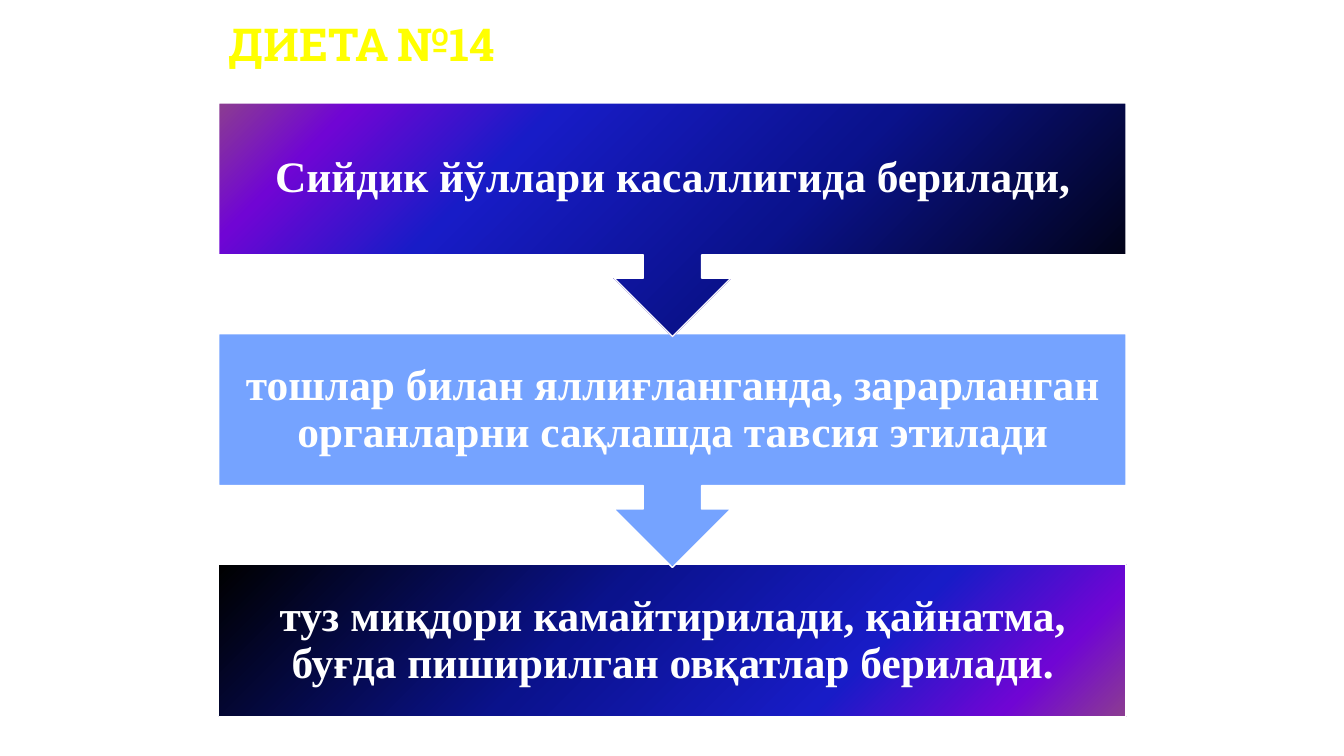
"""Build the slide on diet no. 14: three steps flowing downwards."""
from lxml import etree
from pptx import Presentation
from pptx.dml.color import RGBColor
from pptx.enum.shapes import MSO_SHAPE
from pptx.enum.text import MSO_ANCHOR, MSO_AUTO_SIZE, PP_ALIGN
from pptx.oxml.ns import qn
from pptx.util import Inches, Pt

BOX, CALL = MSO_SHAPE.RECTANGLE, MSO_SHAPE.DOWN_ARROW_CALLOUT
MIDDLE, NO_FIT = MSO_ANCHOR.MIDDLE, MSO_AUTO_SIZE.NONE
LEFT, CENTER = PP_ALIGN.LEFT, PP_ALIGN.CENTER

COLORS = {"title": "FFFF00", "text": "FFFFFF", "line": "FFFFFF", "sky": "6699FF"}
NIGHT = [(0, "000000"), (40, "0A128C"), (70, "181CC7"), (88, "7005D4"), (100, "8C3D91")]
DAWN = [(100 - pos, color) for pos, color in reversed(NIGHT)]

TITLE = "ДИЕТА №14\v"
STEPS = [
    (CALL, DAWN, "Сийдик йўллари касаллигида берилади,"),
    (CALL, None, "тошлар билан яллиғланганда, зарарланган органларни сақлашда тавсия этилади"),
    (BOX, NIGHT, "туз миқдори камайтирилади, қайнатма, буғда пиширилган овқатлар берилади."),
]
X, WIDTH = 2.17, 9
TOP, PITCH = 1.02, 2.29
HEIGHTS = {CALL: 2.32, BOX: 1.51}
INSET = Inches(0.24)


def rgb(name):
    return RGBColor.from_string(COLORS[name])


def style(frame, text, face, size, color, align):
    frame.word_wrap = True
    frame.auto_size = NO_FIT
    frame.vertical_anchor = MIDDLE
    frame.text = text
    para = frame.paragraphs[0]
    para.alignment = align
    para.line_spacing = 0.9
    font = para.font
    font.name, font.size, font.bold = face, Pt(size), True
    font.color.rgb = rgb(color)


def blend(shape, stops):
    shape.fill.gradient()
    shape.fill.gradient_angle = 315
    bands = shape._element.spPr.find(f".//{qn('a:gsLst')}")
    for band in list(bands):
        bands.remove(band)
    for pos, color in stops:
        band = etree.SubElement(bands, qn("a:gs"), pos=str(pos * 1000))
        etree.SubElement(band, qn("a:srgbClr"), val=color)


def tint(shape):
    shape.fill.solid()
    shape.fill.fore_color.rgb = rgb("sky")
    color = shape._element.spPr.find(f"{qn('a:solidFill')}/{qn('a:srgbClr')}")
    etree.SubElement(color, qn("a:alpha"), val="90000")


def add_step(slide, row, kind, stops, text):
    shape = slide.shapes.add_shape(
        kind, Inches(X), Inches(TOP + row * PITCH), Inches(WIDTH), Inches(HEIGHTS[kind]))
    shape.shadow.inherit = False
    if stops:
        blend(shape, stops)
    else:
        tint(shape)
    shape.line.color.rgb = rgb("line")
    shape.line.width = Pt(1)
    frame = shape.text_frame
    frame.margin_left = frame.margin_right = INSET
    frame.margin_top = frame.margin_bottom = INSET
    style(frame, text, "Times New Roman", 31, "text", CENTER)


def main():
    deck = Presentation()
    deck.slide_width, deck.slide_height = Inches(13.33), Inches(7.5)
    slide = deck.slides.add_slide(deck.slide_layouts[5])
    title = slide.shapes.title
    title.left, title.top = Inches(X), Inches(0.3)
    title.width, title.height = Inches(WIDTH), Inches(0.87)
    style(title.text_frame, TITLE, "Roboto Slab", 32.4, "title", LEFT)
    for row, step in reversed(list(enumerate(STEPS))):
        add_step(slide, row, *step)
    deck.save("out.pptx")


if __name__ == "__main__":
    main()
